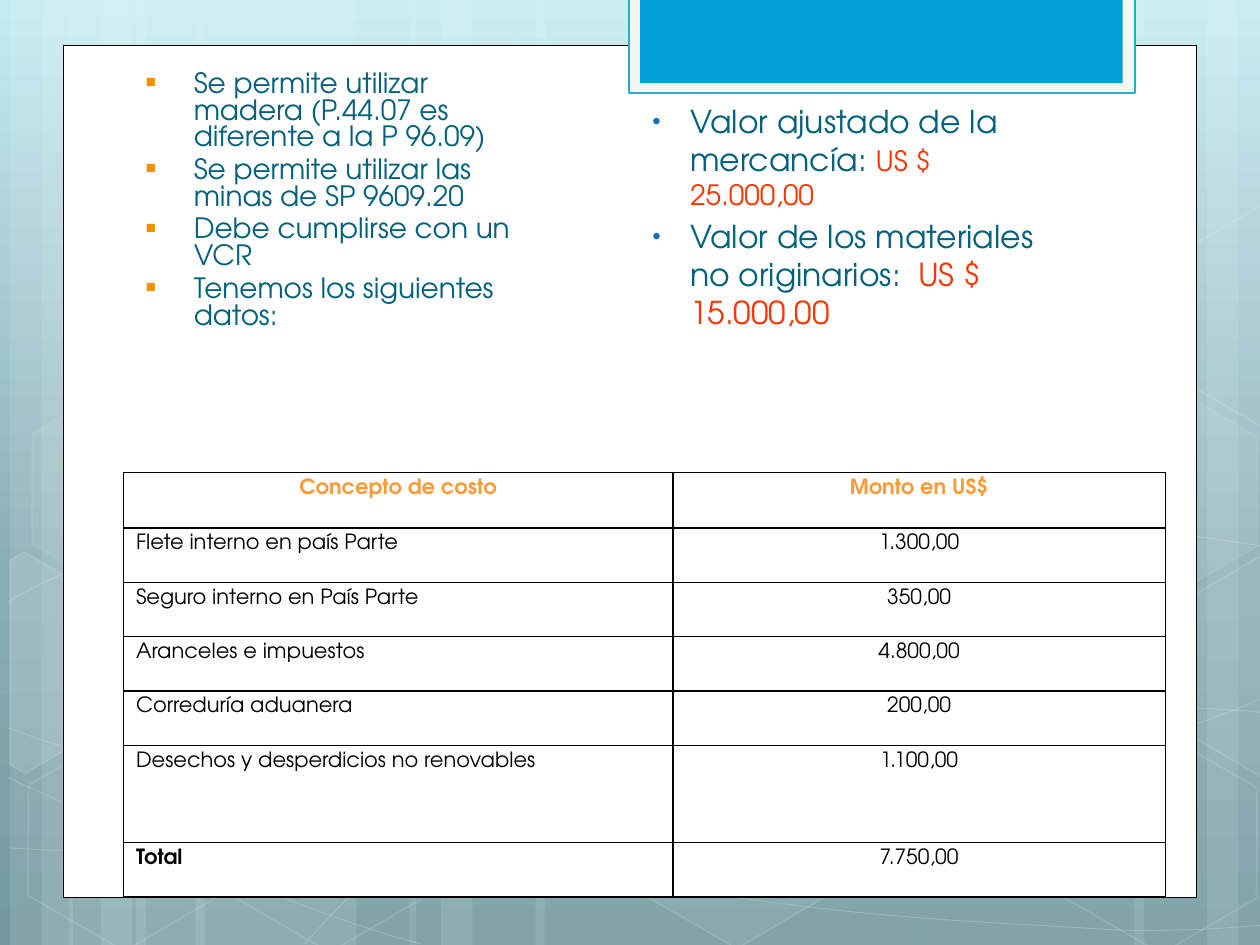
import pptx
import pptx.util
import pptx.dml.color
import pptx.enum.shapes
import pptx.enum.text
import pptx.oxml.ns
import lxml.etree

Inches, Pt = pptx.util.Inches, pptx.util.Pt
RGB = pptx.dml.color.RGBColor.from_string
MSO = pptx.enum.shapes.MSO_SHAPE
ALIGN = pptx.enum.text.PP_ALIGN
qn = pptx.oxml.ns.qn
FONT = "TeX Gyre Adventor"
C = {"white": "FFFFFF", "black": "000000", "sky": "C4EBF1", "mid": "88ADB3",
     "deep": "749AA0", "pale": "F5F5F5", "cyan": "21B2C9", "blue": "009DD9",
     "text": "04617B", "red": "FF3300", "head": "FF9933", "square": "F49100", "dot": "0F6FC6"}


def sub(parent, tag, **attrs):
    return lxml.etree.SubElement(parent, qn(tag), attrs)


def style(sp, fill=None, line=None, width=1, fill_alpha=100, line_alpha=100):
    """Set fill and line, with opacity in percent; None means none."""
    sp.shadow.inherit = False
    for fmt, colour, alpha in ((sp.fill, fill, fill_alpha), (sp.line.fill, line, line_alpha)):
        if not colour:
            fmt.background()
            continue
        fmt.solid()
        fmt.fore_color.rgb = RGB(C[colour])
        if alpha < 100:
            box = sp._element.spPr if fmt is sp.fill else sp.line._ln
            sub(box.find(qn("a:solidFill"))[0], "a:alpha", val=str(alpha * 1000))
    if line:
        sp.line.width = Pt(width)


prs = pptx.Presentation()
prs.slide_width, prs.slide_height = Inches(10), Inches(7.5)
s = prs.slides.add_slide(prs.slide_layouts[6])

# Background gradient, top to bottom
bg = s.background.fill
bg.gradient()
bg.gradient_angle = 270
gs_list = s._element.xpath(".//a:gsLst")[0]
for gs in list(gs_list):
    gs_list.remove(gs)
for pos, colour in ((0, "sky"), (62, "mid"), (100, "deep")):
    sub(sub(gs_list, "a:gs", pos=str(pos * 1000)), "a:srgbClr", val=C[colour])

# Translucent vertical bands: left, width
for x, w in ((1.08, 1.75), (0.08, 0.5), (0.33, 0.83), (1.55, 1.75), (0.55, 0.5), (0.8, 0.83),
             (7.33, 1.75), (9.58, 0.5), (9, 0.83), (4.25, 3.08), (3.25, 0.5), (3.5, 0.83)):
    sp = s.shapes.add_shape(MSO.RECTANGLE, Inches(x), 0, Inches(w), Inches(7.5))
    style(sp, "white", fill_alpha=10)

# Thin curves: a start point, then three Bezier points for each segment
curves = [
    [(0.07, 6.73), (0.61, 6.76), (1.15, 6.79), (1.9, 6.78), (2.65, 6.77), (3.58, 6.75),
     (4.58, 6.65), (5.58, 6.55), (7, 6.36), (7.92, 6.17), (8.83, 5.98), (9.77, 5.68), (10.07, 5.51)],
    [(0.07, 4.77), (0.36, 4.61), (0.65, 4.46), (1.21, 4.31), (1.78, 4.16), (2.59, 3.94),
     (3.47, 3.87), (4.36, 3.8), (5.44, 3.79), (6.54, 3.87), (7.64, 3.95), (9.47, 4.26), (10.07, 4.34)],
    [(0.06, 6.17), (1.27, 6.72), (2.47, 7.27), (3.34, 7.49)],
    [(0.07, 5.78), (0.38, 5.89), (0.7, 6), (1.28, 6.16), (1.86, 6.31), (2.73, 6.56),
     (3.57, 6.73), (4.4, 6.9), (5.45, 7.08), (6.28, 7.18), (7.11, 7.29), (8, 7.33),
     (8.53, 7.36), (9.05, 7.4), (9.19, 7.38), (9.45, 7.38), (9.71, 7.37), (9.89, 7.35), (10.07, 7.34)],
    [(2.42, 7.49), (2.6, 7.29), (2.78, 7.09), (3.02, 6.91), (3.26, 6.73), (3.6, 6.53),
     (3.88, 6.39), (4.16, 6.25), (4.33, 6.19), (4.7, 6.09), (5.06, 5.99), (5.73, 5.85),
     (6.08, 5.78), (6.44, 5.71), (6.49, 5.71), (6.8, 5.69), (7.11, 5.66), (7.6, 5.63),
     (7.94, 5.62), (8.29, 5.61), (8.86, 5.62), (8.86, 5.62), (9.08, 5.62), (9.31, 5.62),
     (9.53, 5.62), (9.71, 5.63), (9.88, 5.64), (9.97, 5.65), (10.06, 5.66), (10.03, 5.65), (10.06, 5.66)],
]
for curve in curves:
    pts = [(Inches(x), Inches(y)) for x, y in curve]
    fb = s.shapes.build_freeform(*pts[0])
    fb.add_line_segments(pts[1:], close=False)
    sp = fb.convert_to_shape()
    # Turn every three line points into one Bezier segment
    outline = sp._element.xpath(".//a:path")[0]
    lines = outline.findall(qn("a:lnTo"))
    for i in range(0, len(lines), 3):
        bezier = sub(outline, "a:cubicBezTo")
        for ln in lines[i:i + 3]:
            bezier.append(ln[0])
            outline.remove(ln)
    style(sp, line="white", width=0.5, line_alpha=20)

# Hexagons: left, top, fill opacity, line opacity
for x, y, fill_alpha, line_alpha in (
        (3.34, 0.36, 4, 8), (4.97, 5.89, 6, 12), (0.11, 5.91, 0, 12), (0.14, 3.12, 7, 8),
        (1.74, 5.92, 0, 12), (7.53, 4.53, 10, 12), (8.34, 5.93, 0, 12), (8.34, 3.14, 7, 8)):
    sp = s.shapes.add_shape(MSO.HEXAGON, Inches(x), Inches(y), Inches(1.75), Inches(1.52))
    sp.adjustments[0] = 0.285
    sp.rotation = 30
    style(sp, "white" if fill_alpha else None, "white", 1, fill_alpha, line_alpha)

# Hexagons cut by the slide edges: fill opacity, corners
for fill_alpha, corners in (
        (10, [(0.08, 4.45), (0.19, 4.38), (0.96, 4.82), (0.95, 5.7), (0.2, 6.14), (0.08, 6.07)]),
        (4, [(9.26, 4.85), (10.01, 4.41), (10.09, 4.46), (10.09, 6.13), (10.02, 6.17), (9.26, 5.73)]),
        (0, [(9.26, 2.07), (10.01, 1.63), (10.1, 1.68), (10.09, 3.35), (10.02, 3.39), (9.26, 2.95)])):
    pts = [(Inches(x), Inches(y)) for x, y in corners]
    fb = s.shapes.build_freeform(*pts[0])
    fb.add_line_segments(pts[1:])
    style(fb.convert_to_shape(), "white" if fill_alpha else None, "white", 1, fill_alpha, 12)

# White page and the tab at its top
for x, y, w, h, fill, line, width in (
        (0.5, 0.36, 9, 6.76, "white", "black", 0.5),
        (4.99, -0.02, 4.02, 0.76, "pale", "cyan", 1.25),
        (5.08, -0.02, 3.83, 0.68, "blue", None, 0)):
    sp = s.shapes.add_shape(MSO.RECTANGLE, Inches(x), Inches(y), Inches(w), Inches(h))
    style(sp, fill, line, width)

# Bulleted columns: each paragraph is a list of (text, size, colour)
rules = [[(text, 16, "text")] for text in (
    "Se permite utilizar madera (P.44.07 es diferente a la P 96.09)",
    "Se permite utilizar las minas de SP 9609.20",
    "Debe cumplirse con un VCR",
    "Tenemos los siguientes datos:")]
values = [
    [("Valor ajustado de la mercancía: ", 18, "text"), ("US $ 25.000,00", 16, "red")],
    [("Valor de los materiales no originarios:  ", 18, "text"), ("US $ 15.000,00", 18, "red")]]
for x, y, paragraphs, spacing, hang, char, colour, percent in (
        (1.06, 0.52, rules, 0.8, 0.38, "■", "square", 60),
        (5, 0.76, values, 1.0, 0.3, "•", "dot", 76)):
    tf = s.shapes.add_textbox(Inches(x), Inches(y), Inches(3.31), Inches(3.31)).text_frame
    tf.word_wrap = True
    for i, runs in enumerate(paragraphs):
        p = tf.add_paragraph() if i else tf.paragraphs[0]
        p.line_spacing = spacing
        p.space_before = Pt(0.2 * runs[0][1])
        ppr = p._p.get_or_add_pPr()
        ppr.set("marL", str(Inches(0.38)))
        ppr.set("indent", str(-Inches(hang)))
        sub(sub(ppr, "a:buClr"), "a:srgbClr", val=C[colour])
        sub(ppr, "a:buSzPct", val=str(percent * 1000))
        sub(ppr, "a:buFont", typeface="Arial")
        sub(ppr, "a:buChar", char=char)
        for text, size, ink in runs:
            r = p.add_run()
            r.text = text
            for name, value in {"name": FONT, "size": Pt(size)}.items():
                setattr(r.font, name, value)
            r.font.color.rgb = RGB(C[ink])

# Cost table: the plain rows share what the two taller rows leave
rows = [("Concepto de costo", "Monto en US$"),
        ("Flete interno en país Parte", "1.300,00"),
        ("Seguro interno en País Parte", "350,00"),
        ("Aranceles e impuestos", "4.800,00"),
        ("Correduría aduanera", "200,00"),
        ("Desechos y desperdicios no renovables", "1.100,00"),
        ("Total", "7.750,00")]
tall = {0: 0.44, 5: 0.77}
plain = (3.37 - sum(tall.values())) / (len(rows) - len(tall))
table = s.shapes.add_table(len(rows), 2, Inches(0.98), Inches(3.75),
                           Inches(8.27), Inches(3.37)).table
for name, value in {"first_row": False, "horz_banding": False}.items():
    setattr(table, name, value)
for col, w in zip(table.columns, (4.36, 3.91)):
    col.width = Inches(w)
for i, row in enumerate(rows):
    table.rows[i].height = Inches(tall.get(i, plain))
    for j, text in enumerate(row):
        cell = table.cell(i, j)
        tcpr = cell._tc.get_or_add_tcPr()
        for side in ("a:lnL", "a:lnR", "a:lnT", "a:lnB"):
            ln = sub(tcpr, side, w=str(Pt(1)))
            sub(sub(ln, "a:solidFill"), "a:srgbClr", val=C["black"])
        cell.fill.background()
        p = cell.text_frame.paragraphs[0]
        p.alignment = ALIGN.CENTER if i == 0 or j == 1 else ALIGN.LEFT
        r = p.add_run()
        r.text = text
        for name, value in {"name": FONT, "size": Pt(12),
                            "bold": i == 0 or text == "Total"}.items():
            setattr(r.font, name, value)
        r.font.color.rgb = RGB(C["black" if i else "head"])

prs.save("out.pptx")
